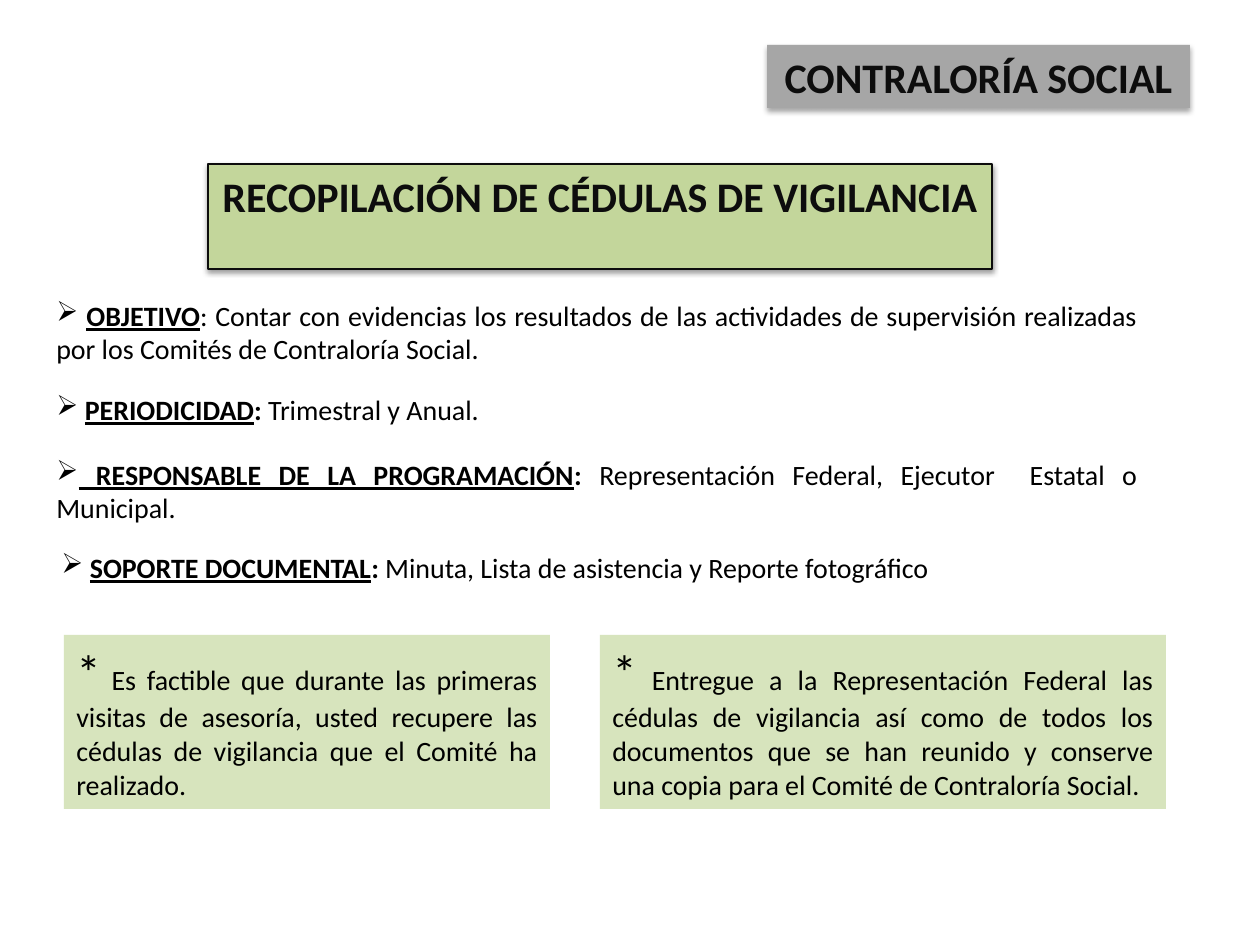
"""Build the slide on collecting social oversight forms."""
from lxml import etree
from pptx import Presentation
from pptx.dml.color import RGBColor
from pptx.enum.shapes import MSO_SHAPE
from pptx.enum.text import MSO_ANCHOR, MSO_AUTO_SIZE, PP_ALIGN
from pptx.oxml.ns import qn
from pptx.util import Pt

PX = 914400 / 126
RECT = MSO_SHAPE.RECTANGLE
TOP = MSO_ANCHOR.TOP
FIT = MSO_AUTO_SIZE.SHAPE_TO_FIT_TEXT
CENTER, JUSTIFY = PP_ALIGN.CENTER, PP_ALIGN.JUSTIFY

BLACK = RGBColor(0x00, 0x00, 0x00)
INK = RGBColor(0x0D, 0x0D, 0x0D)
GRAY = RGBColor(0xA6, 0xA6, 0xA6)
GREEN = RGBColor(0xC3, 0xD6, 0x9B)
PALE_GREEN = RGBColor(0xD7, 0xE4, 0xBD)

TITLE = ("RECOPILACIÓN DE CÉDULAS DE VIGILANCIA", (208, 164, 784, 63))
SECTION = ("CONTRALORÍA SOCIAL", (767, 45, 423, 63))

PLAIN, BOLD, UNDERLINED = (False, False), (True, False), (True, True)
ITEMS = [
    ((44, 292, 1106, 81), [
        (" ", BOLD), ("OBJETIVO", UNDERLINED),
        (": Contar con evidencias los resultados de las actividades de "
         "supervisión realizadas por los Comités de Contraloría Social.", PLAIN)]),
    ((44, 386, 456, 47), [
        (" ", BOLD), ("PERIODICIDAD", UNDERLINED), (": ", BOLD),
        ("Trimestral y Anual.", PLAIN)]),
    ((44, 451, 1106, 81), [
        (" RESPONSABLE DE LA PROGRAMACIÓN", UNDERLINED), (": ", BOLD),
        ("Representación Federal, Ejecutor  Estatal o Municipal.", PLAIN)]),
    ((49, 544, 1102, 47), [
        (" ", BOLD), ("SOPORTE DOCUMENTAL", UNDERLINED), (":", BOLD),
        (" Minuta, Lista de asistencia y Reporte fotográfico", PLAIN)]),
]

NOTE_TOP, NOTE_HEIGHT = 635, 174
NOTES = [
    (64, 486, " Es factible que durante las primeras visitas de asesoría, usted "
              "recupere las cédulas de vigilancia que el Comité ha realizado."),
    (600, 566, " Entregue a la Representación Federal las cédulas de vigilancia "
               "así como de todos los documentos que se han reunido y conserve "
               "una copia para el Comité de Contraloría Social."),
]


def emu(box):
    return [round(v * PX) for v in box]


def prepare_text(s, align, color):
    tf = s.text_frame
    tf.word_wrap = True
    tf.auto_size = FIT
    tf.vertical_anchor = TOP
    p = tf.paragraphs[0]
    p.alignment = align
    p.font.name = "Calibri"
    p.font.color.rgb = color
    return p


def paint(s, fill):
    s.fill.solid()
    s.fill.fore_color.rgb = fill
    s.line.fill.background()
    s.shadow.inherit = False


def add_shadow(s, distance, opacity):
    effects = s._element.spPr.find(qn("a:effectLst"))
    shadow = etree.SubElement(effects, qn("a:outerShdw"), blurRad="40000",
                              dist=str(distance), dir="5400000", rotWithShape="0")
    color = etree.SubElement(shadow, qn("a:srgbClr"), val=str(BLACK))
    etree.SubElement(color, qn("a:alpha"), val=str(opacity * 1000))


def style_banner(s, text, fill, distance, opacity):
    paint(s, fill)
    add_shadow(s, distance, opacity)
    p = prepare_text(s, CENTER, INK)
    p.text = text
    p.font.size = Pt(24)
    p.font.bold = True


def add_item(slide, box, runs):
    s = slide.shapes.add_textbox(*emu(box))
    p = s.text_frame.paragraphs[0]
    etree.SubElement(p._p.get_or_add_pPr(), qn("a:buChar"), char="➢")
    prepare_text(s, JUSTIFY, BLACK)
    p.font.size = Pt(16)
    for text, (bold, underline) in runs:
        r = p.add_run()
        r.text = text
        r.font.bold = bold
        r.font.underline = underline


def add_note(slide, left, width, text):
    s = slide.shapes.add_shape(RECT, *emu((left, NOTE_TOP, width, NOTE_HEIGHT)))
    paint(s, PALE_GREEN)
    p = prepare_text(s, JUSTIFY, BLACK)
    for part, size in (("*", 28), (text, 16)):
        r = p.add_run()
        r.text = part
        r.font.size = Pt(size)


def main():
    prs = Presentation()
    prs.slide_width, prs.slide_height = emu((1260, 945))
    slide = prs.slides.add_slide(prs.slide_layouts[5])

    text, box = TITLE
    title = slide.shapes.title
    title.left, title.top, title.width, title.height = emu(box)
    style_banner(title, text, GREEN, 20000, 38)
    title.line.color.rgb = INK
    title.line.width = Pt(0.75)

    text, box = SECTION
    section = slide.shapes.add_shape(RECT, *emu(box))
    style_banner(section, text, GRAY, 23000, 35)

    for box, runs in ITEMS:
        add_item(slide, box, runs)
    for left, width, text in NOTES:
        add_note(slide, left, width, text)

    prs.save("out.pptx")


if __name__ == "__main__":
    main()
